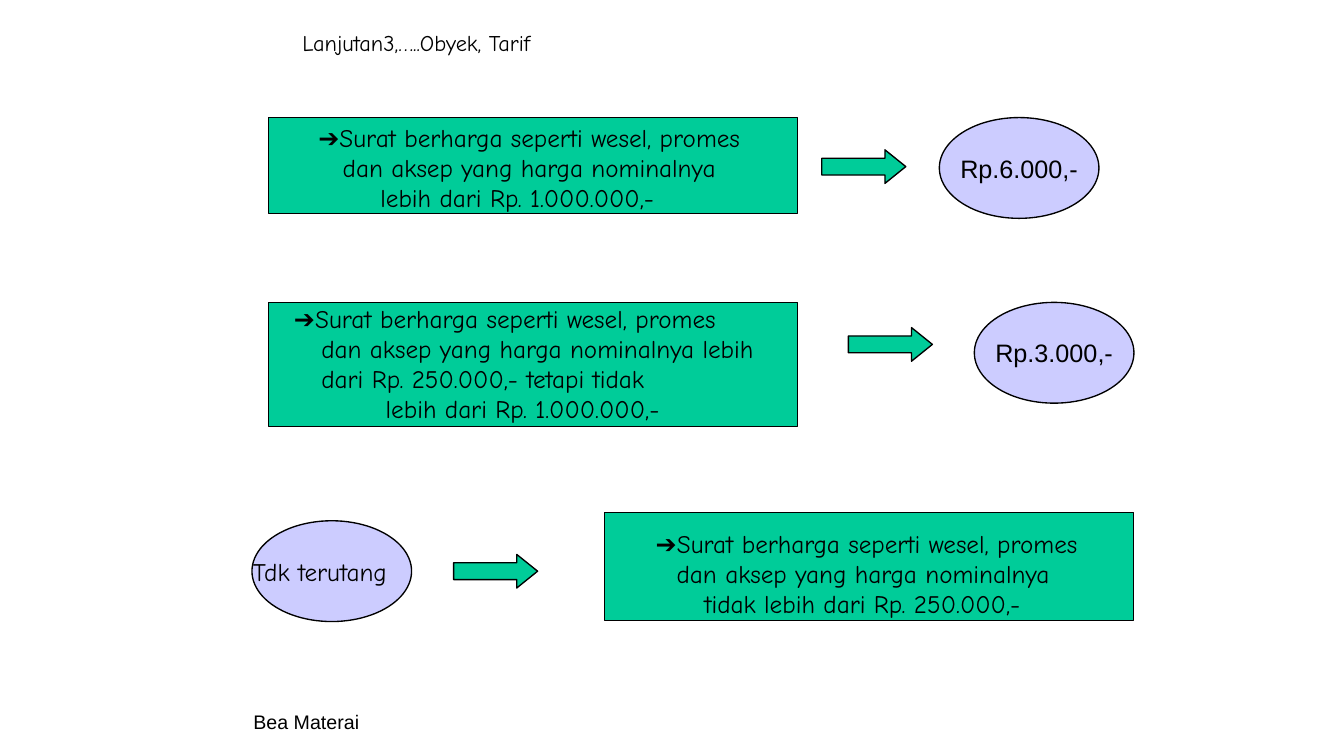
from dataclasses import dataclass
from pptx import Presentation
from pptx.dml.color import RGBColor
from pptx.enum.shapes import MSO_SHAPE as Shape
from pptx.enum.text import MSO_ANCHOR as Anchor, PP_ALIGN as Align
from pptx.util import Pt


@dataclass(frozen=True)
class Theme:
    ink = RGBColor(0x00, 0x00, 0x00)
    green = RGBColor(0x00, 0xCC, 0x99)
    lilac = RGBColor(0xCC, 0xCC, 0xFF)
    hand = "Comic Neue"
    plain = "Arial"
    body = 18
    title = 16
    footer = 14
    leading = 21.5


T = Theme()
RULE_W = 378
OVAL_W, OVAL_H = 114, 72
ARROW_W, ARROW_H = 60, 24


def set_frame(tf, top=0, right=0, anchor=Anchor.TOP, wrap=True):
    tf.margin_left = tf.margin_bottom = 0
    tf.margin_top, tf.margin_right = Pt(top), Pt(right)
    tf.vertical_anchor = anchor
    tf.word_wrap = wrap


def style_runs(p, font, size):
    for r in p.runs:
        r.font.name = T.plain if r.text == "➔" else font
        r.font.size = Pt(size)
        r.font.color.rgb = T.ink


def add_solid(s, kind, box, fill, line=0.96):
    sp = s.shapes.add_shape(kind, *map(Pt, box))
    sp.shadow.inherit = False
    sp.fill.solid()
    sp.fill.fore_color.rgb = fill
    sp.line.color.rgb = T.ink
    sp.line.width = Pt(line)
    return sp


def add_title(s, text, box):
    sp = s.shapes.title
    sp.left, sp.top, sp.width, sp.height = map(Pt, box)
    tf = sp.text_frame
    tf.text = text
    set_frame(tf, 0.7)
    p = tf.paragraphs[0]
    p.alignment = Align.LEFT
    style_runs(p, T.hand, T.title)


def add_footer(s, text, box):
    tf = s.shapes.add_textbox(*map(Pt, box)).text_frame
    tf.text = text
    set_frame(tf, 0.7)
    style_runs(tf.paragraphs[0], T.plain, T.footer)


def add_rule(s, x, y, h, top, align, paragraphs):
    """Green box; each paragraph is (text, left margin, first-line indent, right margin)."""
    tf = add_solid(s, Shape.RECTANGLE, (x, y, RULE_W, h), T.green, 0.72).text_frame
    set_frame(tf, top)
    for i, (text, left, indent, right) in enumerate(paragraphs):
        p = tf.add_paragraph() if i else tf.paragraphs[0]
        if i == 0:
            p.add_run().text = "➔"
        for j, line in enumerate(text.split("\n")):
            if j:
                p.add_line_break()
            p.add_run().text = line
        p.alignment = align
        p.line_spacing = Pt(T.leading)
        pPr = p._p.get_or_add_pPr()
        for name, value in (("marL", left), ("marR", right), ("indent", indent)):
            pPr.set(name, str(Pt(value)))
        style_runs(p, T.hand, T.body)


def add_oval(s, x, y, text, font, right=0):
    tf = add_solid(s, Shape.OVAL, (x, y, OVAL_W, OVAL_H), T.lilac).text_frame
    tf.text = text
    set_frame(tf, right=right, anchor=Anchor.MIDDLE, wrap=False)
    p = tf.paragraphs[0]
    p.alignment = Align.CENTER
    style_runs(p, font, T.body)


def add_arrow(s, x, y):
    sp = add_solid(s, Shape.RIGHT_ARROW, (x, y, ARROW_W, ARROW_H), T.green)
    sp.adjustments[0], sp.adjustments[1] = 0.5, 0.62


def build_tariff_slide(prs):
    s = prs.slides.add_slide(prs.slide_layouts[5])
    add_title(s, "Lanjutan3,…..Obyek, Tarif", (216, 20, 196, 20))

    add_rule(s, 192, 84, 68.4, 3.6, Align.CENTER, [
        ("Surat berharga seperti wesel, promes\ndan aksep yang harga nominalnya", 18, 0, 24),
        ("lebih dari Rp. 1.000.000,-", 0, 0, 23)])
    add_arrow(s, 587, 107)
    add_oval(s, 671, 84, "Rp.6.000,-", T.plain)

    add_rule(s, 192, 216, 88.5, 0.7, Align.LEFT, [
        ("Surat berharga seperti wesel, promes\ndan aksep yang harga nominalnya lebih\n"
         "dari Rp. 250.000,- tetapi tidak", 37.5, -19.5, 18),
        ("lebih dari Rp. 1.000.000,-", 83.5, 0, 0)])
    add_arrow(s, 606, 234)
    add_oval(s, 696, 216, "Rp.3.000,-", T.plain)

    add_oval(s, 180, 372, "Tdk terutang", T.hand, right=17)
    add_arrow(s, 324, 396)
    add_rule(s, 432, 366, 77, 11.5, Align.CENTER, [
        ("Surat berharga seperti wesel, promes", 0, 0, 4),
        ("dan aksep yang harga nominalnya", 0, 0, 9),
        ("tidak lebih dari Rp. 250.000,-", 0, 0, 10)])

    add_footer(s, "Bea Materai", (181, 506, 78, 18))


def main():
    prs = Presentation()
    prs.slide_width, prs.slide_height = Pt(960), Pt(540)
    build_tariff_slide(prs)
    prs.save("out.pptx")


if __name__ == "__main__":
    main()
